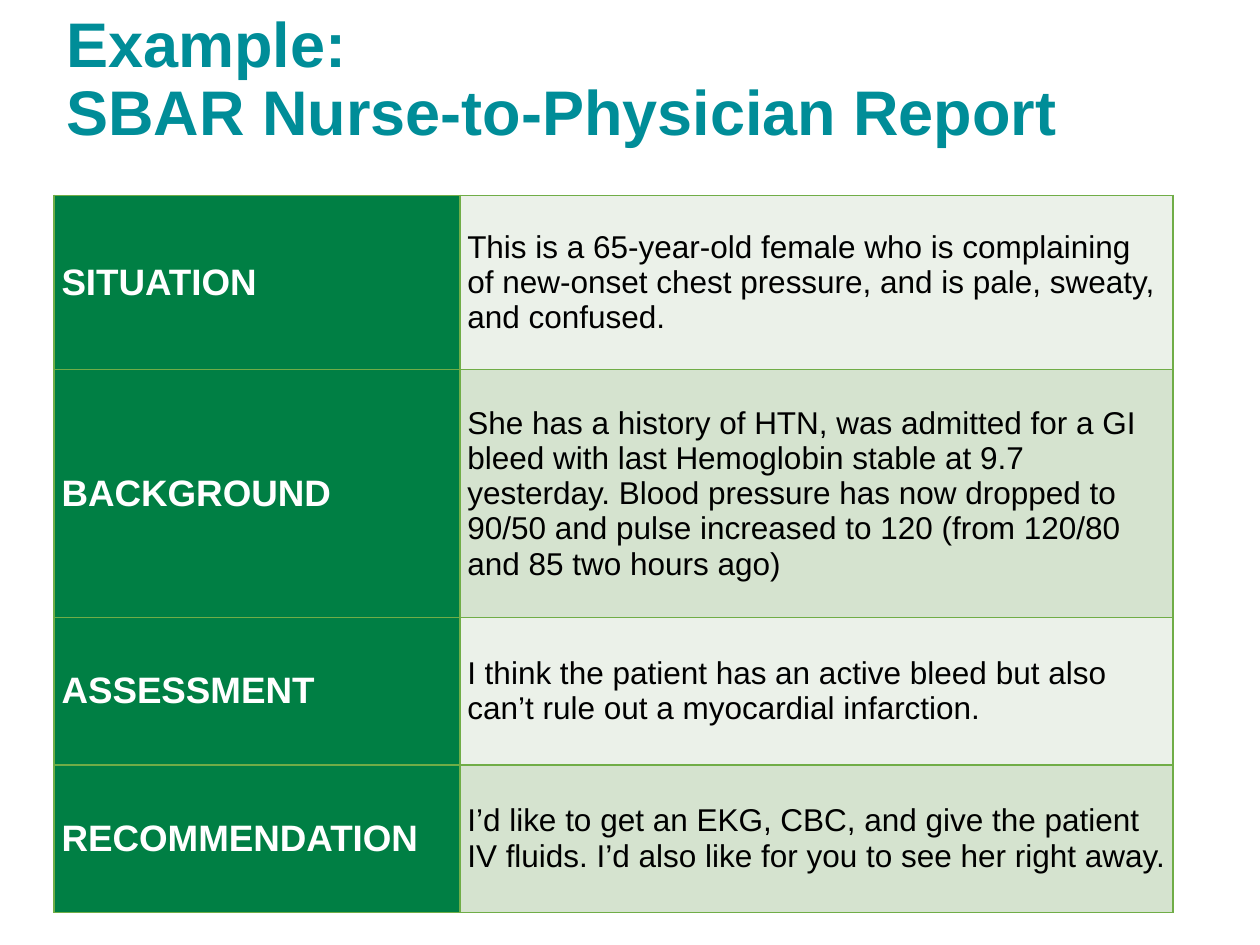
import pptx
import pptx.dml.color
import pptx.enum.text
import pptx.oxml
import pptx.oxml.ns
import pptx.util

Cm = pptx.util.Cm
Pt = pptx.util.Pt

COLORS = {
    "title": "008D98",
    "label": "007F44",
    "label_text": "FFFFFF",
    "body_text": "000000",
    "light_row": "EBF1E9",
    "dark_row": "D5E3CF",
    "border": "70AD47",
}

REPORT = [
    ("SITUATION", "This is a 65-year-old female who is complaining of new-onset chest pressure, "
                  "and is pale, sweaty, and confused."),
    ("BACKGROUND", "She has a history of HTN, was admitted for a GI bleed with last Hemoglobin "
                   "stable at 9.7 yesterday. Blood pressure has now dropped to 90/50 and pulse "
                   "increased to 120 (from 120/80 and 85 two hours ago)"),
    ("ASSESSMENT", "I think the patient has an active bleed but also can’t rule out a "
                   "myocardial infarction."),
    ("RECOMMENDATION", "I’d like to get an EKG, CBC, and give the patient IV fluids. "
                       "I’d also like for you to see her right away."),
]
COLUMN_WIDTHS = [8.18, 14.38]
ROW_HEIGHTS = [3.51, 5, 2.97, 2.97]


class SlideBuilder:
    font = "Arial"
    middle = pptx.enum.text.MSO_ANCHOR.MIDDLE

    def __init__(self, slide):
        self.slide = slide

    def color(self, name):
        return pptx.dml.color.RGBColor.from_string(COLORS[name])

    def format_runs(self, paragraph, size, color, bold):
        for run in paragraph.runs:
            run.font.name = self.font
            run.font.size = Pt(size)
            run.font.bold = bold
            run.font.color.rgb = self.color(color)

    def title(self, text, left, top, width, height):
        shape = self.slide.shapes.add_textbox(Cm(left), Cm(top), Cm(width), Cm(height))
        text_frame = shape.text_frame
        text_frame.word_wrap = True
        text_frame.vertical_anchor = self.middle
        paragraph = text_frame.paragraphs[0]
        paragraph.text = text
        paragraph.line_spacing = 0.9
        self.format_runs(paragraph, 36, "title", True)

    def borders(self, cell):
        properties = cell._tc.get_or_add_tcPr()
        for position, side in enumerate(("lnL", "lnR", "lnT", "lnB")):
            line = pptx.oxml.parse_xml(
                f'<a:{side} {pptx.oxml.ns.nsdecls("a")} w="{Pt(1)}"><a:solidFill>'
                f'<a:srgbClr val="{COLORS["border"]}"/></a:solidFill></a:{side}>')
            properties.insert(position, line)

    def cell(self, cell, text, fill, size, color, bold):
        cell.margin_left = cell.margin_right = Cm(0.15)
        cell.margin_top = cell.margin_bottom = 0
        cell.vertical_anchor = self.middle
        cell.fill.solid()
        cell.fill.fore_color.rgb = self.color(fill)
        self.borders(cell)
        cell.text_frame.text = text
        self.format_runs(cell.text_frame.paragraphs[0], size, color, bold)

    def table(self, rows, left, top, widths, heights):
        shape = self.slide.shapes.add_table(
            len(rows), len(widths), Cm(left), Cm(top), Cm(sum(widths)), Cm(sum(heights)))
        table = shape.table
        table.first_row = table.horz_banding = False
        for column, width in zip(table.columns, widths):
            column.width = Cm(width)
        for index, (label, body) in enumerate(rows):
            table.rows[index].height = Cm(heights[index])
            band = "dark_row" if index % 2 else "light_row"
            self.cell(table.cell(index, 0), label, "label", 21, "label_text", True)
            self.cell(table.cell(index, 1), body, band, 18, "body_text", False)


def main():
    presentation = pptx.Presentation()
    presentation.slide_width = Cm(25.4)
    presentation.slide_height = Cm(19.05)
    builder = SlideBuilder(presentation.slides.add_slide(presentation.slide_layouts[6]))
    builder.title("Example:\vSBAR Nurse-to-Physician Report", 1.09, 0.58, 21.89, 2.13)
    builder.table(REPORT, 1.09, 3.94, COLUMN_WIDTHS, ROW_HEIGHTS)
    presentation.save("out.pptx")


if __name__ == "__main__":
    main()
